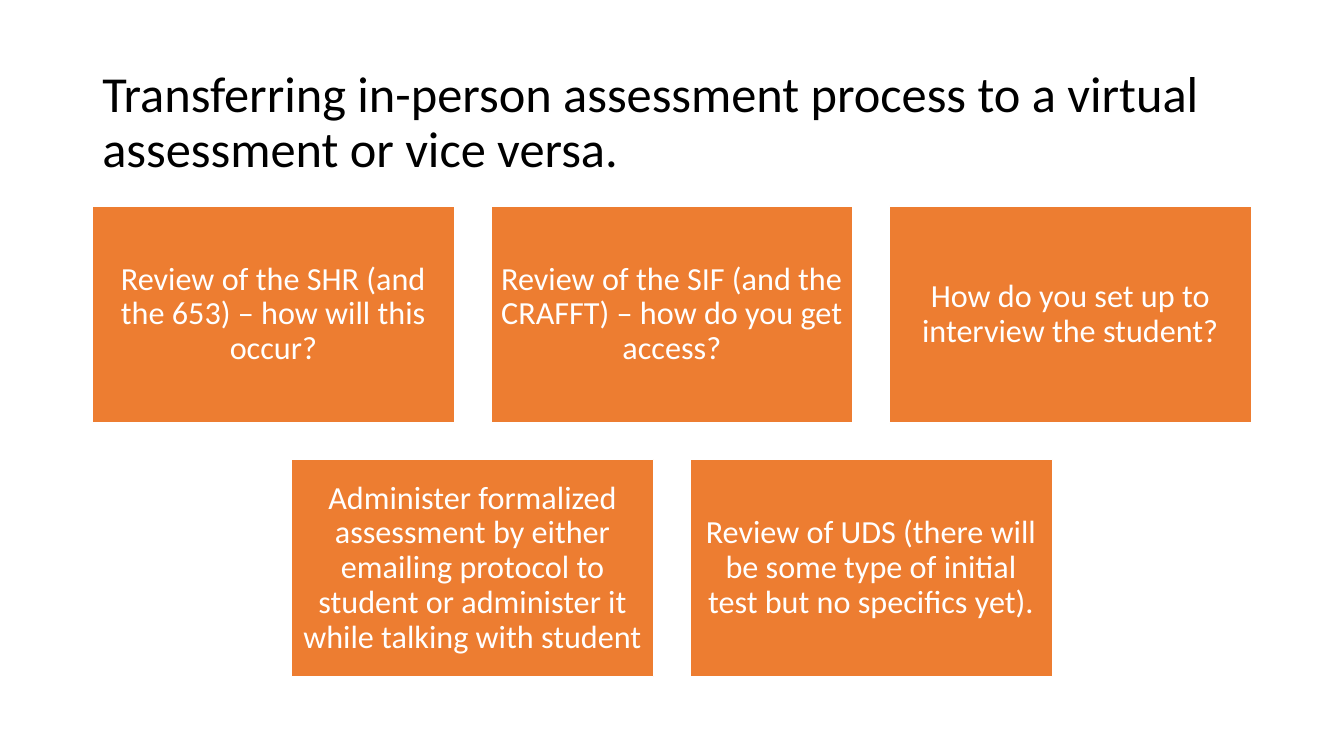
import pptx
import pptx.util
import pptx.dml.color
import pptx.enum.shapes
import pptx.enum.text

Pt = pptx.util.Pt
TITLE = "Transferring in-person assessment process to a virtual assessment or vice versa."
ROWS = [
    [
        "Review of the SHR (and the 653) – how will this occur?",
        "Review of the SIF (and the CRAFFT) – how do you get access?",
        "How do you set up to interview the student?",
    ],
    [
        "Administer formalized assessment by either emailing protocol to student or administer it while talking with student",
        "Review of UDS (there will be some type of initial test but no specifics yet).",
    ],
]


def color(text):
    """Turn a hex string into a colour."""
    return pptx.dml.color.RGBColor.from_string(text)


def write(shape, text, size, ink, align, inset):
    """Put one centred-in-height paragraph into a shape."""
    frame = shape.text_frame
    frame.word_wrap = True
    frame.vertical_anchor = pptx.enum.text.MSO_ANCHOR.MIDDLE
    frame.margin_left = frame.margin_right = Pt(inset)
    frame.margin_top = frame.margin_bottom = Pt(inset)
    para = frame.paragraphs[0]
    para.text = text
    para.alignment = align
    para.line_spacing = 0.9
    para.font.name = "Calibri"
    para.font.size = Pt(size)
    para.font.color.rgb = color(ink)


def title(slide, left, top, width, height):
    """Write the heading in its box."""
    box = slide.shapes.add_textbox(Pt(left), Pt(top), Pt(width), Pt(height))
    write(box, TITLE, 36, "000000", pptx.enum.text.PP_ALIGN.LEFT, 7.2)


def card(slide, text, left, top, width, height):
    """Draw one orange card with its text."""
    shape = slide.shapes.add_shape(
        pptx.enum.shapes.MSO_SHAPE.RECTANGLE, Pt(left), Pt(top), Pt(width), Pt(height)
    )
    shape.shadow.inherit = False
    shape.fill.solid()
    shape.fill.fore_color.rgb = color("ED7D31")
    shape.line.color.rgb = color("FFFFFF")
    shape.line.width = Pt(1)
    write(shape, text, 23, "FFFFFF", pptx.enum.text.PP_ALIGN.CENTER, 6.9)


def cards(slide, left, top, width):
    """Lay out centred rows of cards, with gaps a tenth of a card wide."""
    wide = width / 3.2
    high = wide * 0.6
    gap = wide * 0.1
    for row, texts in enumerate(ROWS):
        span = len(texts) * (wide + gap) - gap
        start = left + (width - span) / 2
        for col, text in enumerate(texts):
            card(slide, text, start + col * (wide + gap), top + row * (high + gap), wide, high)


def main():
    """Build and save the slide."""
    deck = pptx.Presentation()
    deck.slide_width = Pt(960)
    deck.slide_height = Pt(540)
    slide = deck.slides.add_slide(deck.slide_layouts[6])
    title(slide, 66, 44, 828, 89)
    cards(slide, 66, 147, 828)
    deck.save("out.pptx")


if __name__ == "__main__":
    main()
